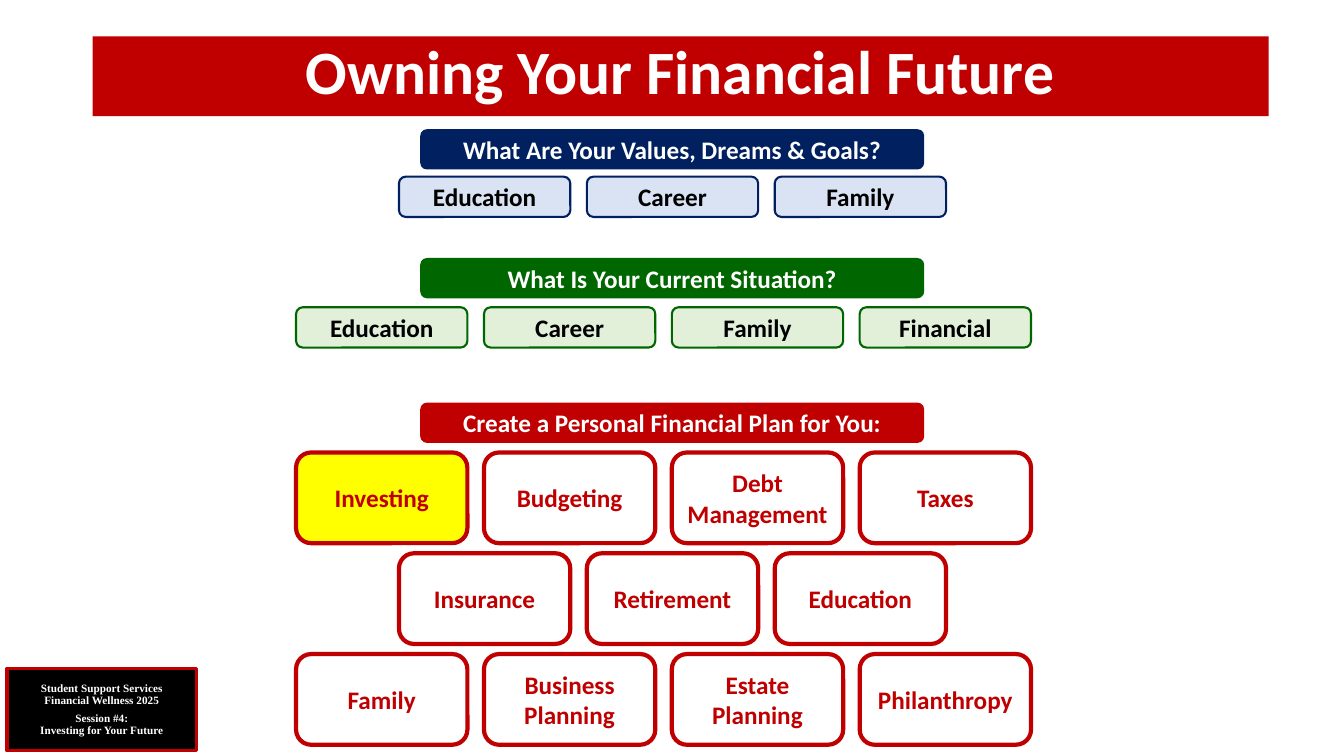
from pptx import Presentation
from pptx.dml.color import RGBColor
from pptx.enum.shapes import MSO_SHAPE as Shape
from pptx.enum.text import MSO_ANCHOR as Anchor, PP_ALIGN as Align
from pptx.util import Pt

RED = RGBColor(0xC0, 0x00, 0x00)
NAVY = RGBColor(0x00, 0x20, 0x60)
GREEN = RGBColor(0x00, 0x66, 0x00)
PALE_BLUE = RGBColor(0xDA, 0xE3, 0xF3)
PALE_GREEN = RGBColor(0xE2, 0xF0, 0xD9)
YELLOW = RGBColor(0xFF, 0xFF, 0x00)
WHITE = RGBColor(0xFF, 0xFF, 0xFF)
BLACK = RGBColor(0x00, 0x00, 0x00)

SLIDE_WIDTH, SLIDE_HEIGHT = 960, 540
TOPIC_WIDTH, TOPIC_PITCH = 122.4, 134.2
FOUR_LEFT, THREE_LEFT = 211.5, 285
LOW, TALL = 28.8, 64.8


class PlanSlide:
    def __init__(self, slide):
        self.slide = slide
        self.body = {"name": "Calibri", "size": Pt(18), "bold": True}

    def box(self, kind, left, top, width, height, fill, line=None, weight=0):
        box = self.slide.shapes.add_shape(
            kind, Pt(left), Pt(top), Pt(width), Pt(height))
        box.shadow.inherit = False
        box.fill.solid()
        box.fill.fore_color.rgb = fill
        if line is None:
            box.line.fill.background()
        else:
            box.line.color.rgb = line
            box.line.width = Pt(weight)
        return box

    def add_words(self, box, lines, color, anchor=Anchor.MIDDLE, spacing=1.0,
                  **changes):
        frame = box.text_frame
        frame.word_wrap = True
        frame.vertical_anchor = anchor
        for number, (words, gap) in enumerate(lines):
            paragraph = frame.add_paragraph() if number else frame.paragraphs[0]
            paragraph.alignment = Align.CENTER
            paragraph.line_spacing = spacing
            if gap:
                paragraph.space_before = Pt(gap)
            run = paragraph.add_run()
            run.text = words
            for key, value in {**self.body, **changes}.items():
                setattr(run.font, key, value)
            run.font.color.rgb = color

    def title(self, words):
        banner = self.box(Shape.RECTANGLE, 66.2, 26, 840, 57, RED)
        self.add_words(banner, [(words, 0)], WHITE, Anchor.TOP, 0.9, size=Pt(44))

    def session_label(self, lines):
        label = self.box(Shape.RECTANGLE, 5, 477.4, 135.4, 59, BLACK, RED, 2.25)
        self.add_words(label, lines, WHITE, spacing=0.9,
                       name="Times New Roman", size=Pt(8))

    def heading(self, words, top, fill):
        bar = self.box(Shape.ROUNDED_RECTANGLE, 300.2, top, 360, LOW, fill)
        self.add_words(bar, [(words, 0)], WHITE)

    def topics(self, names, left, top, height, fill, line, weight, color,
               highlight=None):
        for column, name in enumerate(names):
            topic = self.box(
                Shape.ROUNDED_RECTANGLE, left + column * TOPIC_PITCH, top,
                TOPIC_WIDTH, height, YELLOW if name == highlight else fill,
                line, weight)
            self.add_words(topic, [(name, 0)], color)


def main():
    deck = Presentation()
    deck.slide_width, deck.slide_height = Pt(SLIDE_WIDTH), Pt(SLIDE_HEIGHT)
    plan = PlanSlide(deck.slides.add_slide(deck.slide_layouts[6]))

    plan.session_label([
        ("Student Support Services", 0),
        ("Financial Wellness 2025", 0),
        ("Session #4:", 4.4),
        ("Investing for Your Future", 0),
    ])
    plan.title("Owning Your Financial Future")

    plan.heading("What Are Your Values, Dreams & Goals?", 92.3, NAVY)
    plan.topics(["Education", "Career", "Family"],
                THREE_LEFT, 126.2, LOW, PALE_BLUE, NAVY, 1.5, BLACK)

    plan.heading("What Is Your Current Situation?", 184.3, GREEN)
    plan.topics(["Education", "Career", "Family", "Financial"],
                FOUR_LEFT, 219.5, LOW, PALE_GREEN, GREEN, 1.5, BLACK)

    plan.heading("Create a Personal Financial Plan for You:", 287.6, RED)
    plan_rows = [
        (FOUR_LEFT, ["Investing", "Budgeting", "Debt Management", "Taxes"]),
        (THREE_LEFT, ["Insurance", "Retirement", "Education"]),
        (FOUR_LEFT, ["Family", "Business Planning", "Estate Planning",
                     "Philanthropy"]),
    ]
    for row, (left, names) in enumerate(plan_rows):
        plan.topics(names, left, 323.2 + row * 72, TALL, WHITE, RED, 3, RED,
                    highlight="Investing")

    deck.save("out.pptx")


if __name__ == "__main__":
    main()
